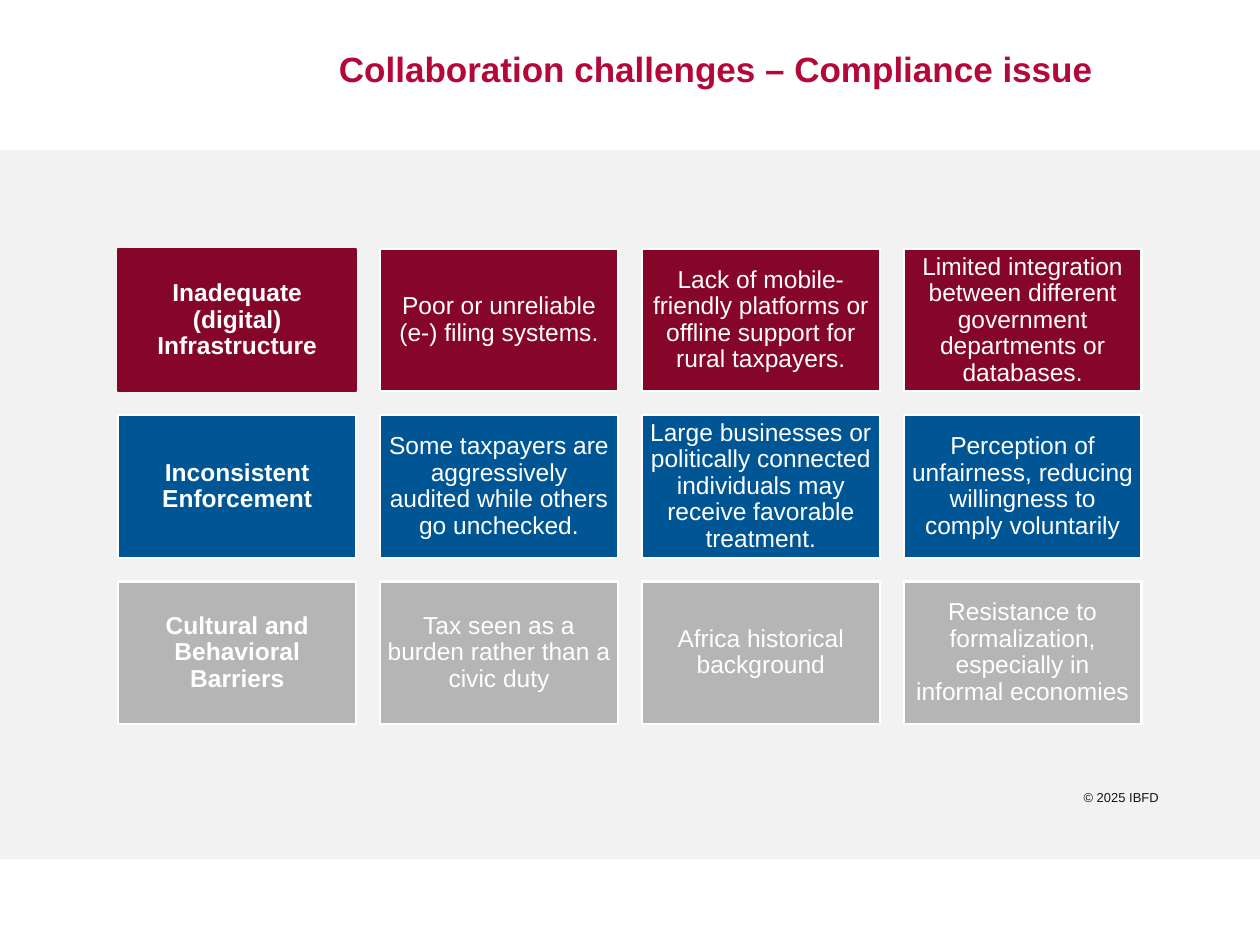
from dataclasses import dataclass

from pptx import Presentation
from pptx.dml.color import RGBColor
from pptx.enum.shapes import MSO_SHAPE
from pptx.enum.text import MSO_ANCHOR, MSO_AUTO_SIZE, PP_ALIGN
from pptx.util import Pt


@dataclass(frozen=True)
class Theme:
    font: str = "Arial"
    title: RGBColor = RGBColor(0xB3, 0x08, 0x38)
    band: RGBColor = RGBColor(0xF2, 0xF2, 0xF2)
    ink: RGBColor = RGBColor(0x15, 0x15, 0x15)
    white: RGBColor = RGBColor(0xFF, 0xFF, 0xFF)
    red: RGBColor = RGBColor(0x86, 0x06, 0x2A)
    blue: RGBColor = RGBColor(0x00, 0x56, 0x95)
    grey: RGBColor = RGBColor(0xB5, 0xB5, 0xB5)
    title_size: float = 20
    card_size: float = 14
    copyright_size: float = 7.4
    outline: float = 1.25


THEME = Theme()

# Row colour, heading, then the three issues under it
CHALLENGES = [
    (THEME.red, "Inadequate (digital) Infrastructure",
     "Poor or unreliable (e-) filing systems.",
     "Lack of mobile-friendly platforms or offline support for rural taxpayers.",
     "Limited integration between different government departments or databases."),
    (THEME.blue, "Inconsistent Enforcement",
     "Some taxpayers are aggressively audited while others go unchecked.",
     "Large businesses or politically connected individuals may receive favorable treatment.",
     "Perception of unfairness, reducing willingness to comply voluntarily"),
    (THEME.grey, "Cultural and Behavioral Barriers",
     "Tax seen as a burden rather than a civic duty",
     "Africa historical background",
     "Resistance to formalization, especially in informal economies"),
]


def set_all(target, values):
    for name, value in values.items():
        setattr(target, name, value)


def write(shape, text, size, color, bold=False, align=PP_ALIGN.LEFT,
          anchor=MSO_ANCHOR.MIDDLE, inset=0, spacing=1.0):
    frame = shape.text_frame
    frame.text = text
    set_all(frame, {
        "word_wrap": True, "auto_size": MSO_AUTO_SIZE.NONE, "vertical_anchor": anchor,
        "margin_left": Pt(inset), "margin_right": Pt(inset),
        "margin_top": Pt(inset), "margin_bottom": Pt(inset),
    })
    paragraph = frame.paragraphs[0]
    set_all(paragraph, {"alignment": align, "line_spacing": spacing})
    font = paragraph.runs[0].font
    set_all(font, {"name": THEME.font, "size": Pt(size), "bold": bold})
    font.color.rgb = color


def add_panel(slide, box, fill):
    panel = slide.shapes.add_shape(MSO_SHAPE.RECTANGLE, *map(Pt, box))
    panel.shadow.inherit = False
    panel.fill.solid()
    panel.fill.fore_color.rgb = fill
    panel.line.fill.background()
    return panel


def place_title(slide, box, text):
    title = slide.shapes.title
    set_all(title, dict(zip(("left", "top", "width", "height"), map(Pt, box))))
    write(title, text, THEME.title_size, THEME.title, bold=True,
          anchor=MSO_ANCHOR.TOP, spacing=0.93)


def place_copyright(slide, box, text):
    notice = slide.shapes.add_textbox(*map(Pt, box))
    write(notice, text, THEME.copyright_size, THEME.ink, align=PP_ALIGN.RIGHT)


def place_challenges(slide, box, rows, gap=13.6):
    left, top, width, height = box
    columns = len(rows[0]) - 1
    card_width = (width - gap * (columns - 1)) / columns
    card_height = (height - gap * (len(rows) - 1)) / len(rows)
    for row, (color, *texts) in enumerate(rows):
        for column, text in enumerate(texts):
            card = add_panel(slide, (left + column * (card_width + gap),
                                     top + row * (card_height + gap),
                                     card_width, card_height), color)
            # The opening card is outlined in its own colour
            card.line.color.rgb = color if row == column == 0 else THEME.white
            card.line.width = Pt(THEME.outline)
            write(card, text, THEME.card_size, THEME.white, bold=column == 0,
                  align=PP_ALIGN.CENTER, inset=4.4, spacing=0.9)


def main():
    deck = Presentation()
    set_all(deck, {"slide_width": Pt(720), "slide_height": Pt(540)})
    slide = deck.slides.add_slide(deck.slide_layouts[5])

    # Background band
    add_panel(slide, (0, 85.7, 720, 405.3), THEME.band)
    # Heading and copyright line
    place_title(slide, (193.7, 29.5, 620.6, 27.4),
                "Collaboration challenges – Compliance issue")
    place_copyright(slide, (377.3, 451.4, 285, 8), "© 2025 IBFD")
    # Grid of challenges
    place_challenges(slide, (67.6, 142.3, 584.8, 271.4), CHALLENGES)

    deck.save("out.pptx")


if __name__ == "__main__":
    main()
